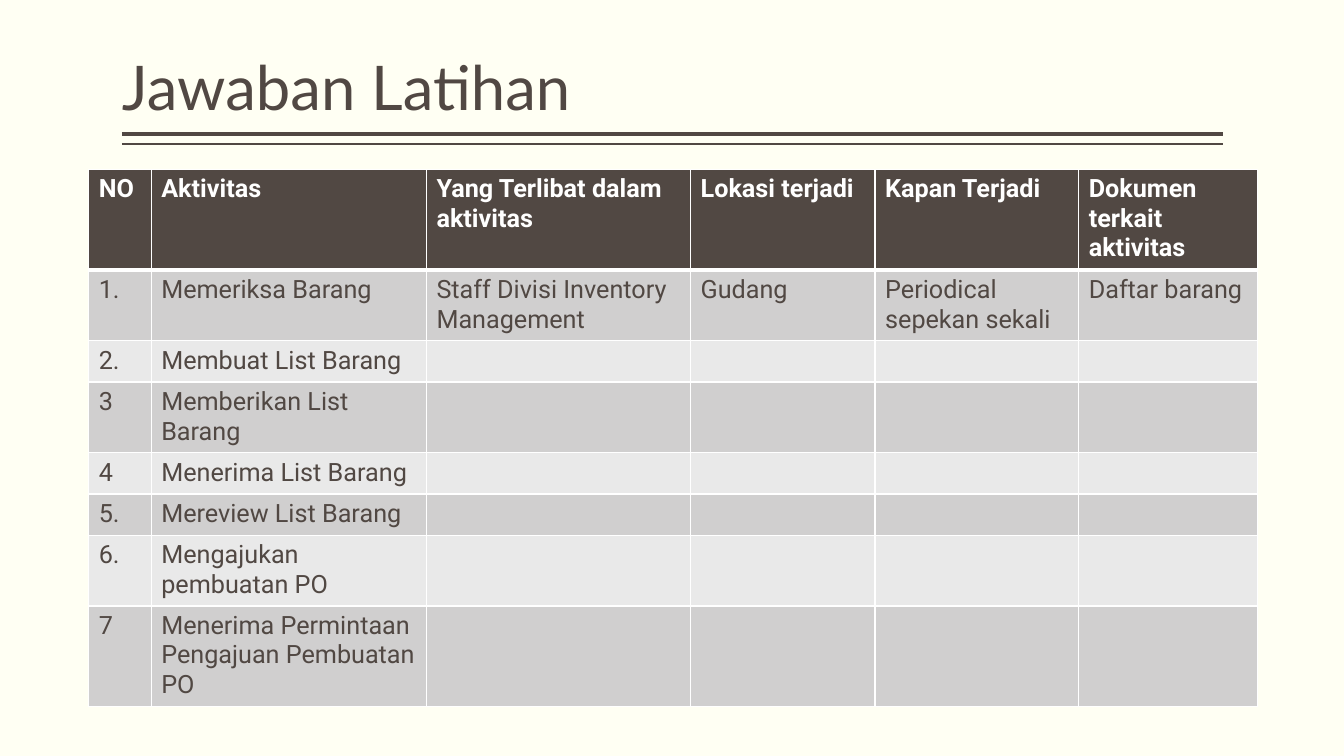
from lxml import etree
from pptx import Presentation
from pptx.dml.color import RGBColor
from pptx.enum.shapes import MSO_CONNECTOR
from pptx.enum.text import MSO_ANCHOR
from pptx.oxml.ns import qn
from pptx.util import Inches, Pt

LINE = MSO_CONNECTOR.STRAIGHT
BOTTOM = MSO_ANCHOR.BOTTOM
DARK, WHITE, CREAM = "514843", "FFFFFF", "FFFFF3"
BANDS = ("D0CFCF", "E9E9E9")

COLS = (0.62, 2.73, 2.62, 1.83, 2.02, 1.77)
ROW = 0.41
ROWS = (
    ("NO", "Aktivitas", "Yang Terlibat dalam aktivitas", "Lokasi terjadi",
     "Kapan Terjadi", "Dokumen terkait aktivitas"),
    ("1.", "Memeriksa Barang", "Staff Divisi Inventory Management", "Gudang",
     "Periodical sepekan sekali", "Daftar barang"),
    ("2.", "Membuat List Barang"),
    ("3", "Memberikan List Barang"),
    ("4", "Menerima List Barang"),
    ("5.", "Mereview List Barang"),
    ("6.", "Mengajukan pembuatan PO"),
    ("7", "Menerima Permintaan Pengajuan Pembuatan PO"),
)


def color(code):
    return RGBColor.from_string(code)


def style(para, face, size, code, bold=False):
    font = para.font
    font.name, font.size, font.bold = face, Pt(size), bold
    font.color.rgb = color(code)


def rule(slide, left, top, width, weight):
    line = slide.shapes.add_connector(
        LINE, Inches(left), Inches(top), Inches(left + width), Inches(top))
    line.line.color.rgb = color(DARK)
    line.line.width = Pt(weight)
    etree.SubElement(line._element.spPr, qn("a:effectLst"))


def title(slide, text, left, top, width, height):
    box = slide.shapes.add_textbox(
        Inches(left), Inches(top), Inches(width), Inches(height))
    frame = box.text_frame
    frame.word_wrap = True
    frame.vertical_anchor = BOTTOM
    frame.margin_left = frame.margin_right = 0
    para = frame.paragraphs[0]
    para.text = text
    para.line_spacing = 0.9
    style(para, "Lato", 44, DARK)
    # Double rule under the title
    base = top + height
    rule(slide, left, base + 0.05, width, 3)
    rule(slide, left, base + 0.15, width, 1)


def border(cell, side, weight):
    props = cell._tc.get_or_add_tcPr()
    edge = etree.SubElement(props, qn("a:ln" + side), w=str(Pt(weight)))
    fill = etree.SubElement(edge, qn("a:solidFill"))
    etree.SubElement(fill, qn("a:srgbClr"), val=WHITE)


def grid(slide, left, top):
    frame = slide.shapes.add_table(
        len(ROWS), len(COLS), Inches(left), Inches(top),
        Inches(sum(COLS)), Inches(ROW * len(ROWS)))
    table = frame.table
    for col, width in zip(table.columns, COLS):
        col.width = Inches(width)
    for i, row in enumerate(ROWS):
        head = i == 0
        table.rows[i].height = Inches(ROW)
        for j in range(len(COLS)):
            cell = table.cell(i, j)
            # Borders go before the fill; the header has a thick lower edge
            for side in "LRTB":
                thick = (i, side) in ((0, "B"), (1, "T"))
                border(cell, side, 3 if thick else 1)
            cell.fill.solid()
            cell.fill.fore_color.rgb = color(DARK if head else BANDS[(i - 1) % 2])
            para = cell.text_frame.paragraphs[0]
            if j < len(row):
                para.text = row[j]
            style(para, "Roboto", 18, WHITE if head else DARK, head)


def main():
    deck = Presentation()
    deck.slide_width, deck.slide_height = Inches(13.33), Inches(7.5)
    slide = deck.slides.add_slide(deck.slide_layouts[6])
    back = slide.background.fill
    back.solid()
    back.fore_color.rgb = color(CREAM)
    title(slide, "Jawaban Latihan", 1.21, 0.08, 10.92, 1.2)
    grid(slide, 0.88, 1.68)
    deck.save("out.pptx")


if __name__ == "__main__":
    main()
